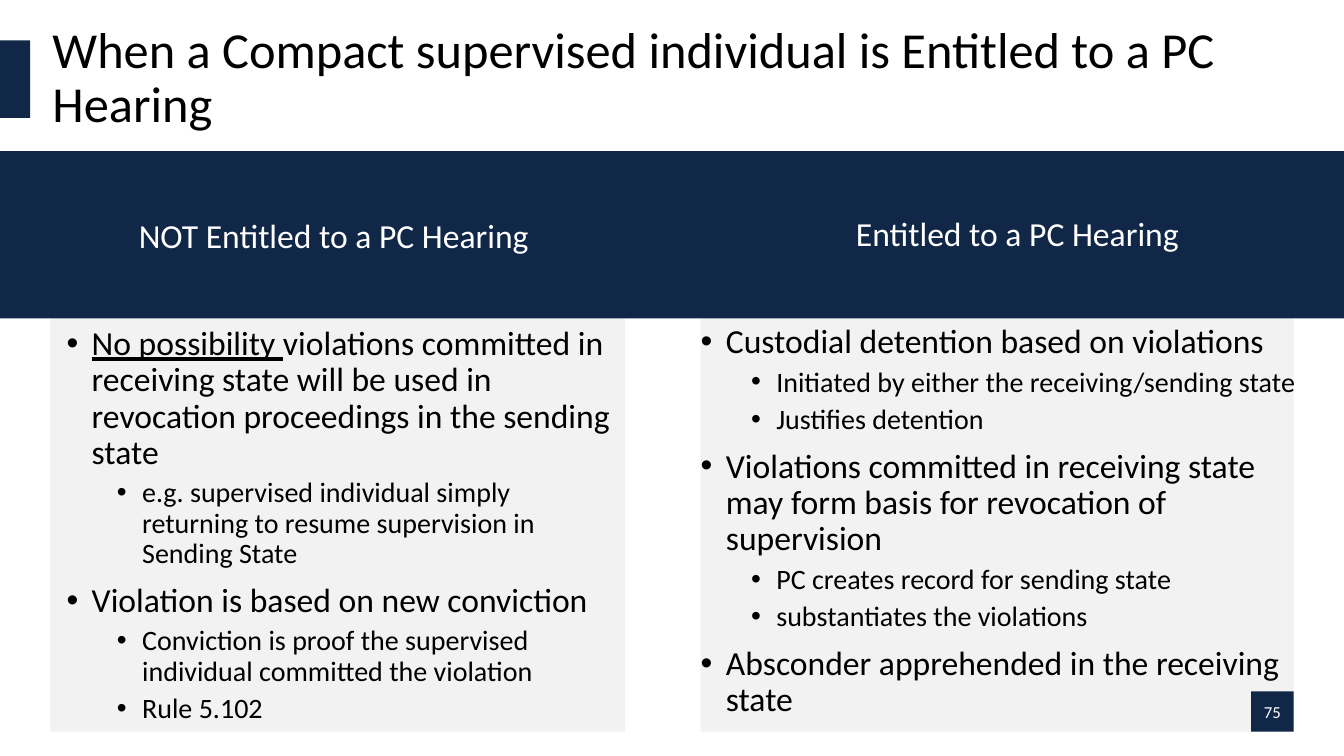
from dataclasses import dataclass

from lxml import etree
from pptx import Presentation
from pptx import util as u
from pptx.dml.color import RGBColor
from pptx.enum import shapes, text
from pptx.oxml.ns import qn
from pptx.slide import Slide
from pptx.text.text import TextFrame, _Paragraph

PX = 9144  # EMU in one px, at 100 px to the inch
FONT = "Calibri"
NAVY = RGBColor(0x10, 0x27, 0x47)
GREY = RGBColor(0xF2, 0xF2, 0xF2)
BLACK = RGBColor(0, 0, 0)
WHITE = RGBColor(255, 255, 255)


@dataclass(frozen=True)
class Box:
    left: int
    top: int
    width: int
    height: int

    def emu(self) -> tuple[int, int, int, int]:
        return (self.left * PX, self.top * PX, self.width * PX, self.height * PX)


@dataclass(frozen=True)
class Point:
    words: str
    level: int = 0
    lead: str = ""  # underlined opening words


@dataclass(frozen=True)
class Column:
    panel: Box
    head: Box
    title: str
    body: Box
    points: tuple[Point, ...]


@dataclass(frozen=True)
class Level:
    size: int
    indent: int
    before: int


LEVELS = (Level(24, 25, 10), Level(20, 75, 5))
HANG = 25

COLUMNS = (
    Column(
        Box(50, 316, 570, 410),
        Box(90, 213, 482, 40),
        "NOT Entitled to a PC Hearing",
        Box(66, 324, 549, 499),
        (
            Point(
                "violations committed in receiving state will be used in "
                "revocation proceedings in the sending state",
                lead="No possibility ",
            ),
            Point("e.g. supervised individual simply returning to resume "
                  "supervision in Sending State", 1),
            Point("Violation is based on new conviction"),
            Point("Conviction is proof the supervised individual committed "
                  "the violation", 1),
            Point("Rule 5.102", 1),
        ),
    ),
    Column(
        Box(695, 316, 588, 410),
        Box(768, 211, 482, 36),
        "Entitled to a PC Hearing",
        Box(695, 322, 596, 470),
        (
            Point("Custodial detention based on violations"),
            Point("Initiated by either the receiving/sending state", 1),
            Point("Justifies detention", 1),
            Point("Violations committed in receiving state may form basis "
                  "for revocation of supervision"),
            Point("PC creates record for sending state", 1),
            Point("substantiates the violations", 1),
            Point("Absconder apprehended in the receiving state"),
        ),
    ),
)


def add_rect(slide: Slide, box: Box, fill: RGBColor) -> TextFrame:
    rect = slide.shapes.add_shape(shapes.MSO_SHAPE.RECTANGLE, *box.emu())
    rect.shadow.inherit = False
    rect.fill.solid()
    rect.fill.fore_color.rgb = fill
    rect.line.fill.background()
    return rect.text_frame


def add_frame(slide: Slide, box: Box) -> TextFrame:
    frame = slide.shapes.add_textbox(*box.emu()).text_frame
    frame.word_wrap = True
    frame.margin_left = frame.margin_right = 0
    frame.margin_top = frame.margin_bottom = 0
    return frame


def set_font(para: _Paragraph, size: int, color: RGBColor) -> None:
    para.font.name = FONT
    para.font.size = u.Pt(size)
    para.font.color.rgb = color


def add_line(frame: TextFrame, words: str, size: int, color: RGBColor) -> _Paragraph:
    para = frame.paragraphs[0]
    para.text = words
    set_font(para, size, color)
    return para


def set_bullet(para: _Paragraph, indent: int) -> None:
    props = para._p.get_or_add_pPr()
    props.set("marL", str(indent * PX))
    props.set("indent", str(-HANG * PX))
    etree.SubElement(props, qn("a:buFont")).set("typeface", "Arial")
    etree.SubElement(props, qn("a:buChar")).set("char", "•")


def add_points(frame: TextFrame, points: tuple[Point, ...]) -> None:
    for i, point in enumerate(points):
        para = frame.add_paragraph() if i else frame.paragraphs[0]
        level = LEVELS[point.level]
        para.level = point.level
        para.line_spacing = 0.9
        para.space_before = u.Pt(level.before if i else 0)
        set_bullet(para, level.indent)
        set_font(para, level.size, BLACK)
        if point.lead:
            lead = para.add_run()
            lead.text = point.lead
            lead.font.underline = True
        para.add_run().text = point.words


def main() -> None:
    deck = Presentation()
    deck.slide_width, deck.slide_height = 1333 * PX, 750 * PX
    slide = deck.slides.add_slide(deck.slide_layouts[6])

    for col in COLUMNS:
        add_rect(slide, col.panel, GREY)
    add_rect(slide, Box(0, 150, 1333, 166), NAVY)
    add_rect(slide, Box(0, 40, 30, 77), NAVY)

    title = add_frame(slide, Box(52, 40, 1231, 77))
    title.vertical_anchor = text.MSO_ANCHOR.MIDDLE
    line = add_line(
        title,
        "When a Compact supervised individual is Entitled to a PC Hearing",
        36,
        BLACK,
    )
    line.line_spacing = 0.9

    for col in COLUMNS:
        head = add_line(add_frame(slide, col.head), col.title, 24, WHITE)
        head.alignment = text.PP_ALIGN.CENTER
        add_points(add_frame(slide, col.body), col.points)

    badge = add_rect(slide, Box(1241, 686, 42, 40), NAVY)
    badge.vertical_anchor = text.MSO_ANCHOR.MIDDLE
    add_line(badge, "75", 12, WHITE).alignment = text.PP_ALIGN.CENTER

    deck.save("out.pptx")


if __name__ == "__main__":
    main()
